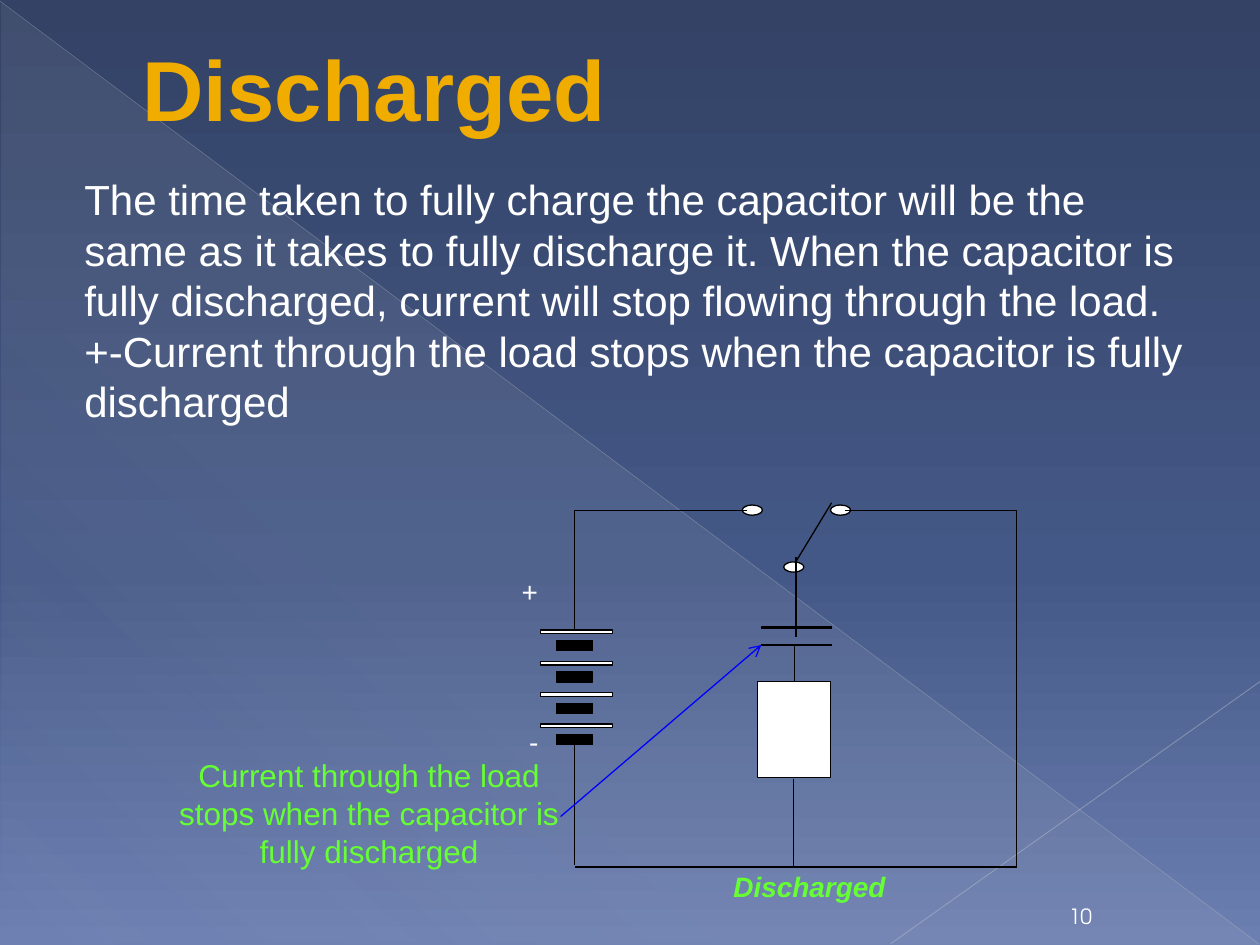
from typing import NamedTuple

import pptx
import pptx.dml.color
import pptx.enum.shapes
import pptx.enum.text
import pptx.oxml
import pptx.oxml.ns
import pptx.util
from lxml import etree

Pt = pptx.util.Pt
RGBColor = pptx.dml.color.RGBColor
Shape = pptx.enum.shapes.MSO_SHAPE
Align = pptx.enum.text.PP_ALIGN
Anchor = pptx.enum.text.MSO_ANCHOR
qn = pptx.oxml.ns.qn

BLACK = RGBColor(0x00, 0x00, 0x00)
WHITE = RGBColor(0xFF, 0xFF, 0xFF)
GOLD = RGBColor(0xF0, 0xAD, 0x00)
DARK_GOLD = RGBColor(0xA6, 0x78, 0x00)
GREEN = RGBColor(0x66, 0xFF, 0x33)
BLUE = RGBColor(0x00, 0x00, 0xFF)
NIGHT = RGBColor(0x33, 0x42, 0x65)
DUSK = RGBColor(0x44, 0x58, 0x87)
HAZE = RGBColor(0x6C, 0x7F, 0xB1)
MIST = RGBColor(0xD4, 0xD4, 0xD6)
PALE_LINE = RGBColor(0xB9, 0xBD, 0xC8)
PALER_LINE = RGBColor(0xC1, 0xC4, 0xCE)


class Stop(NamedTuple):
    position: int
    color: RGBColor
    opacity: int = 100


class Line(NamedTuple):
    x1: float
    y1: float
    x2: float
    y2: float
    color: RGBColor = BLACK
    weight: float = 0.75
    opacity: int = 100
    arrow: bool = False


class Block(NamedTuple):
    kind: Shape
    left: float
    top: float
    width: float
    height: float
    color: RGBColor = WHITE


class Label(NamedTuple):
    text: str
    left: float
    top: float
    width: float
    height: float
    size: float
    color: RGBColor = WHITE
    align: Align = Align.CENTER
    font: str = "Arial"
    bold: bool = False
    italic: bool = False
    anchor: Anchor = Anchor.TOP
    indent: float = 0
    inset_top: float = 3.6


def add_child(parent, tag: str, **attributes):
    return etree.SubElement(parent, qn(tag), attributes)


def set_opacity(color_element, opacity: int) -> None:
    if opacity < 100:
        add_child(color_element, "a:alpha", val=str(opacity * 1000))


def set_gradient(fill, owner, stops: list[Stop], angle: int) -> None:
    """Fill with stops; the angle runs clockwise from left to right."""
    fill.gradient()
    gradient = next(owner.iter(qn("a:gradFill")))
    for child in list(gradient):
        gradient.remove(child)
    stop_list = add_child(gradient, "a:gsLst")
    for stop in stops:
        mark = add_child(stop_list, "a:gs", pos=str(stop.position * 1000))
        set_opacity(add_child(mark, "a:srgbClr", val=str(stop.color)), stop.opacity)
    add_child(gradient, "a:lin", ang=str(angle * 60000), scaled="0")


def draw_line(page, line: Line) -> None:
    connector = page.shapes.add_connector(
        pptx.enum.shapes.MSO_CONNECTOR.STRAIGHT,
        Pt(line.x1), Pt(line.y1), Pt(line.x2), Pt(line.y2))
    connector.line.color.rgb = line.color
    connector.line.width = Pt(line.weight)
    properties = connector._element.spPr
    set_opacity(next(properties.iter(qn("a:srgbClr"))), line.opacity)
    if line.arrow:
        add_child(properties.find(qn("a:ln")), "a:tailEnd", type="arrow")
    add_child(properties, "a:effectLst")


def draw_block(page, block: Block):
    shape = page.shapes.add_shape(block.kind, Pt(block.left), Pt(block.top),
                                  Pt(block.width), Pt(block.height))
    shape.shadow.inherit = False
    shape.fill.solid()
    shape.fill.fore_color.rgb = block.color
    shape.line.color.rgb = BLACK
    shape.line.width = Pt(0.75)
    return shape


def draw_label(page, label: Label):
    box = page.shapes.add_textbox(Pt(label.left), Pt(label.top),
                                  Pt(label.width), Pt(label.height))
    frame = box.text_frame
    frame.word_wrap = True
    frame.vertical_anchor = label.anchor
    frame.margin_top = Pt(label.inset_top)
    frame.margin_left = Pt(7.2 + label.indent)
    para = frame.paragraphs[0]
    para.text = label.text
    para.alignment = label.align
    para.font.name = label.font
    para.font.size = Pt(label.size)
    para.font.bold = label.bold
    para.font.italic = label.italic
    para.font.color.rgb = label.color
    return box


def outline_text(box, color: RGBColor, weight: float) -> None:
    properties = box.text_frame.paragraphs[0].runs[0].font._element
    line = etree.Element(qn("a:ln"), w=str(Pt(weight)))
    add_child(add_child(line, "a:solidFill"), "a:srgbClr", val=str(color))
    properties.insert(0, line)


def draw_backdrop(page) -> None:
    set_gradient(page.background.fill, page._element,
                 [Stop(0, NIGHT), Stop(60, DUSK), Stop(100, HAZE)], 90)
    triangle = draw_block(page, Block(Shape.RIGHT_TRIANGLE, 0.7, 1.4, 719.3, 538.6))
    triangle.line.fill.background()
    set_gradient(triangle.fill, triangle._element,
                 [Stop(0, MIST, 10), Stop(70, MIST, 8), Stop(100, MIST, 1)], 133)
    draw_line(page, Line(0, 0.7, 719.3, 539.3, PALE_LINE, 0.39, 35))
    draw_line(page, Line(720, 389.5, 509, 539.3, PALER_LINE, 0.47, 45))


def draw_circuit(page) -> None:
    top, bottom, left, right = 291.6, 495.4, 328.5, 581
    load = Block(Shape.RECTANGLE, 432.7, 389.5, 41.8, 54.7)
    terminals = [Block(Shape.OVAL, x, y, 11.6, 5.8)
                 for x, y in ((474.5, 288.6), (424.1, 288.6), (447.8, 321.1))]
    for block in (load, *terminals):
        draw_block(page, block)

    for cell in range(4):
        drop = cell * 17.9
        draw_block(page, Block(Shape.RECTANGLE, 308.9, 360 + drop, 41, 2.2))
        draw_block(page, Block(Shape.RECTANGLE, 317.9, 366.1 + drop, 20.9, 5.8, BLACK))

    capacitor = [Line(435, y, 475.2, y, weight=1.5) for y in (358.6, 368.6)]
    wires = [
        Line(455, 364, 455, 318.5, weight=1),
        Line(454.1, 368.6, 454.1, 389.5),
        Line(453.6, 445, 453.6, bottom),
        Line(left, bottom, right, bottom),
        Line(right, bottom, right, top),
        Line(right, top, 483.1, top),
        Line(left, top, 427, top),
        Line(left, 360, left, top),
        Line(left, bottom - 1, left, 422.6),
    ]
    switch = Line(475.2, 287.3, 454.3, 321.8)
    for line in (*capacitor, *wires, switch):
        draw_line(page, line)


def main() -> None:
    deck = pptx.Presentation()
    deck.slide_width, deck.slide_height = Pt(720), Pt(540)
    page = deck.slides.add_slide(deck.slide_layouts[6])
    draw_backdrop(page)
    title = draw_label(page, Label("Discharged", 36, 20.9, 648, 110, 48.6, GOLD,
                                   Align.LEFT, bold=True, indent=38.2, inset_top=0))
    outline_text(title, DARK_GOLD, 0.5)
    callout = "Current through the load stops when the capacitor is fully discharged"
    body = ("The time taken to fully charge the capacitor will be the same as it takes "
            "to fully discharge it. When the capacitor is fully discharged, current will "
            "stop flowing through the load.+-" + callout)
    draw_label(page, Label(body, 36, 95.8, 648, 412.6, 24, align=Align.LEFT, indent=5))
    draw_circuit(page)
    for label in (
        Label("10", 597.6, 510.5, 39.6, 23.8, 12, font="TeX Gyre Adventor",
              anchor=Anchor.BOTTOM),
        Label("+", 277.2, 324.7, 51.1, 38.2, 16),
        Label("-", 279.4, 410.4, 51.1, 38.2, 16),
        Label("Discharged", 353.5, 493.2, 218.2, 31, 16, GREEN, bold=True, italic=True),
        Label(callout, 84.2, 428.4, 253.4, 111.6, 18, GREEN),
    ):
        draw_label(page, label)
    draw_line(page, Line(320.4, 466.6, 435, 368.6, BLUE, arrow=True))
    deck.save("out.pptx")


if __name__ == "__main__":
    main()
